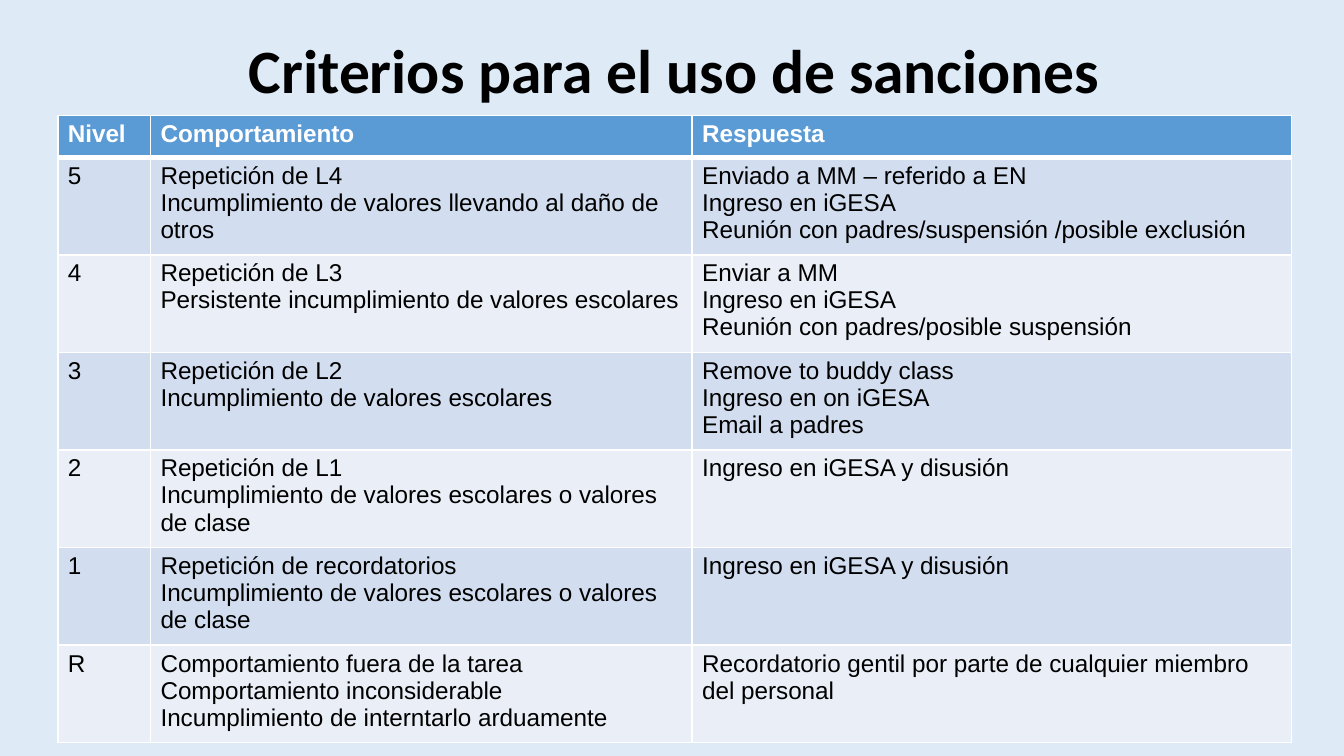
from lxml import etree
from pptx import Presentation
from pptx.dml.color import RGBColor
from pptx.enum.text import MSO_ANCHOR, PP_ALIGN
from pptx.oxml.ns import qn
from pptx.util import Inches, Pt

CENTER = PP_ALIGN.CENTER
MIDDLE = MSO_ANCHOR.MIDDLE

WHITE, BLACK = "FFFFFF", "000000"
BACKGROUND = "DEEBF7"
HEADER_FILL = "5B9BD5"
BAND_FILLS = ("D2DEEF", "EAEFF7")

SIDE_MARGIN, VERTICAL_MARGIN = Pt(5.4), Pt(2.7)
COLUMN_WIDTHS = (0.69, 4.03, 4.46)
ROW_HEIGHTS = (0.31, 0.7, 0.7, 0.7, 0.7, 0.55, 0.7)
CELL_SIZE = 13
ENTRY = "Ingreso en iGESA"
BREACH = "Incumplimiento de valores"
CLASS_BREACH = f"{BREACH} escolares o valores de clase"

# Each cell is a list of paragraphs.
ROWS = [
    (["Nivel"], ["Comportamiento"], ["Respuesta"]),
    (["5"],
     ["Repetición de L4", f"{BREACH} llevando al daño de otros"],
     ["Enviado a MM – referido a EN", ENTRY,
      "Reunión con padres/suspensión /posible exclusión"]),
    (["4"],
     ["Repetición de L3", "Persistente incumplimiento de valores escolares"],
     ["Enviar a MM", ENTRY, "Reunión con padres/posible suspensión"]),
    (["3"],
     ["Repetición de L2", f"{BREACH} escolares"],
     ["Remove to buddy class", "Ingreso en on iGESA", "Email a padres"]),
    (["2"], ["Repetición de L1", CLASS_BREACH], [f"{ENTRY} y disusión"]),
    (["1"], ["Repetición de recordatorios", CLASS_BREACH], [f"{ENTRY} y disusión"]),
    (["R"],
     ["Comportamiento fuera de la tarea", "Comportamiento inconsiderable",
      "Incumplimiento de interntarlo arduamente"],
     ["Recordatorio gentil por parte de cualquier miembro del personal"]),
]


def color(value):
    return RGBColor.from_string(value)


def set_font(font, name, size, value, bold):
    font.name, font.size, font.bold = name, Pt(size), bold
    font.color.rgb = color(value)


def set_margins(target):
    target.margin_left = target.margin_right = SIDE_MARGIN
    target.margin_top = target.margin_bottom = VERTICAL_MARGIN


def set_borders(cell, bottom_width):
    """Draw white borders; they must precede the fill in the cell properties."""
    properties = cell._tc.get_or_add_tcPr()
    widths = {"a:lnL": 1, "a:lnR": 1, "a:lnT": 1, "a:lnB": bottom_width}
    for position, (tag, width) in enumerate(widths.items()):
        line = etree.Element(qn(tag), w=str(Pt(width)))
        fill = etree.SubElement(line, qn("a:solidFill"))
        etree.SubElement(fill, qn("a:srgbClr"), val=WHITE)
        properties.insert(position, line)


def add_title(slide, text):
    box = slide.shapes.add_textbox(Inches(0.43), Inches(0.17), Inches(9.18), Inches(0.76))
    frame = box.text_frame
    frame.word_wrap = True
    frame.vertical_anchor = MIDDLE
    set_margins(frame)
    para = frame.paragraphs[0]
    para.text = text
    para.alignment = CENTER
    para.line_spacing = 0.9
    set_font(para.font, "Calibri", 33, BLACK, True)


def fill_cell(cell, lines, row_index):
    header = row_index == 0
    cell.text = "\n".join(lines)
    set_margins(cell)
    for para in cell.text_frame.paragraphs:
        # The paragraph mark needs the size too, or it makes the row taller.
        for span in para.runs:
            set_font(span.font, "Arial", CELL_SIZE, WHITE if header else BLACK, header)
        etree.SubElement(para._p, qn("a:endParaRPr"), sz=str(CELL_SIZE * 100))
    cell.fill.solid()
    fill = HEADER_FILL if header else BAND_FILLS[(row_index - 1) % 2]
    cell.fill.fore_color.rgb = color(fill)
    set_borders(cell, 3 if header else 1)


def add_sanctions_table(slide):
    table = slide.shapes.add_table(
        len(ROWS), len(COLUMN_WIDTHS), Inches(0.43), Inches(0.86),
        Inches(sum(COLUMN_WIDTHS)), Inches(sum(ROW_HEIGHTS))).table
    for column, width in zip(table.columns, COLUMN_WIDTHS):
        column.width = Inches(width)
    for row_index, (row, height) in enumerate(zip(table.rows, ROW_HEIGHTS)):
        row.height = Inches(height)
        for cell, lines in zip(row.cells, ROWS[row_index]):
            fill_cell(cell, lines, row_index)


def main():
    deck = Presentation()
    deck.slide_width = Inches(10)
    deck.slide_height = deck.slide_width * 9 // 16
    slide = deck.slides.add_slide(deck.slide_layouts[6])
    slide.background.fill.solid()
    slide.background.fill.fore_color.rgb = color(BACKGROUND)
    add_title(slide, "Criterios para el uso de sanciones")
    add_sanctions_table(slide)
    deck.save("out.pptx")


if __name__ == "__main__":
    main()
